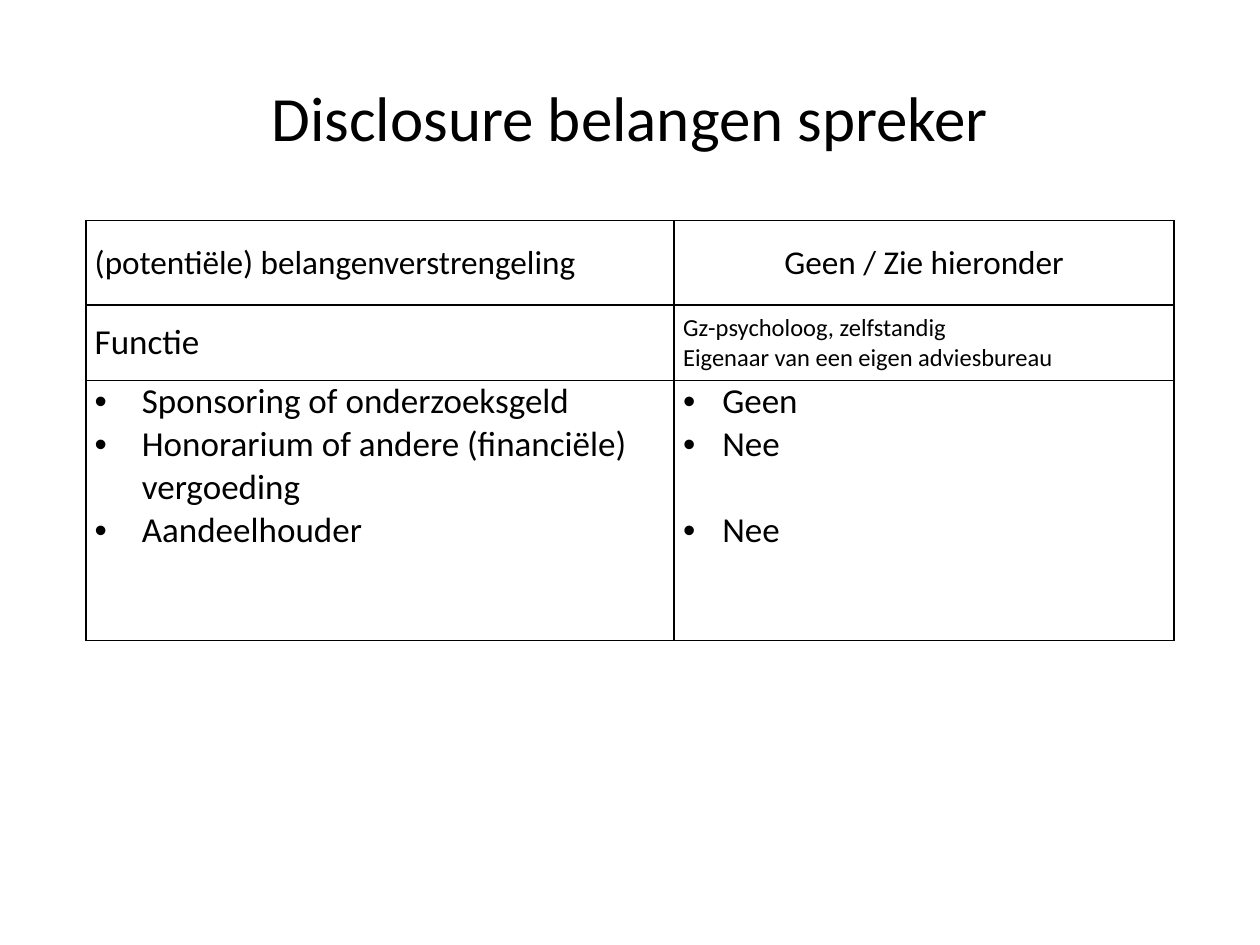
from lxml.etree import SubElement
from pptx import Presentation
from pptx.dml.color import RGBColor
from pptx.enum.text import MSO_ANCHOR as Anchor, PP_ALIGN as Align
from pptx.oxml.ns import qn
from pptx.util import Cm, Pt

BLACK = RGBColor(0, 0, 0)
WHITE = RGBColor(255, 255, 255)
FONT = "Calibri"


def write(frame, lines, size, align=Align.LEFT, bullet_indent=None, gaps=None):
    """Write one paragraph per line; gaps maps a line number to its space before."""
    for number, line in enumerate(lines):
        paragraph = frame.paragraphs[0] if number == 0 else frame.add_paragraph()
        if bullet_indent:
            properties = paragraph._p.get_or_add_pPr()
            properties.set("marL", str(bullet_indent))
            properties.set("indent", str(-bullet_indent))
            SubElement(properties, qn("a:buFont"), typeface="Arial")
            SubElement(properties, qn("a:buChar"), char="•")
        paragraph.alignment = align
        if gaps and number in gaps:
            paragraph.space_before = Pt(gaps[number])
        run = paragraph.add_run()
        run.text = line
        run.font.name = FONT
        run.font.size = Pt(size)
        run.font.color.rgb = BLACK


def add_borders(cell):
    properties = cell._tc.get_or_add_tcPr()
    for side in ("lnL", "lnR", "lnT", "lnB"):
        line = SubElement(properties, qn(f"a:{side}"), w=str(Pt(1)))
        fill = SubElement(line, qn("a:solidFill"))
        SubElement(fill, qn("a:srgbClr"), val=str(BLACK))


presentation = Presentation()
presentation.slide_width = Cm(25.4)
presentation.slide_height = Cm(19.05)
slide = presentation.slides.add_slide(presentation.slide_layouts[6])
slide.background.fill.solid()
slide.background.fill.fore_color.rgb = WHITE

# Title
title = slide.shapes.add_textbox(Cm(1.27), Cm(0.76), Cm(22.86), Cm(3.18))
title.text_frame.word_wrap = True
title.text_frame.vertical_anchor = Anchor.MIDDLE
write(title.text_frame, ["Disclosure belangen spreker"], 36, align=Align.CENTER)

# Disclosure table: text lines and their format for each cell
rows = [
    [(["(potentiële) belangenverstrengeling"], dict(size=19)),
     (["Geen / Zie hieronder"], dict(size=19, align=Align.CENTER))],
    [(["Functie"], dict(size=20)),
     (["Gz-psycholoog, zelfstandig", "Eigenaar van een eigen adviesbureau"],
      dict(size=14))],
    [(["Sponsoring of onderzoeksgeld",
       "Honorarium of andere (financiële) vergoeding",
       "Aandeelhouder"], dict(size=20, bullet_indent=Cm(0.95))),
     (["Geen", "Nee", "Nee"],
      dict(size=20, bullet_indent=Cm(0.79), gaps={2: 24.4}))],
]
column_widths = [Cm(11.86), Cm(10.08)]
row_heights = [Cm(1.7), Cm(1.52), Cm(5.24)]

frame = slide.shapes.add_table(len(rows), len(column_widths), Cm(1.73), Cm(4.45),
                               sum(column_widths), sum(row_heights))
table = frame.table
table.first_row = False
table.horz_banding = False
for column, width in zip(table.columns, column_widths):
    column.width = width
for row, height in zip(table.rows, row_heights):
    row.height = height

for row_number, contents in enumerate(rows):
    for column_number, (lines, text_format) in enumerate(contents):
        cell = table.cell(row_number, column_number)
        cell.margin_left = cell.margin_right = Cm(0.18)
        cell.margin_top = cell.margin_bottom = Cm(0)
        cell.vertical_anchor = Anchor.TOP if row_number == 2 else Anchor.MIDDLE
        add_borders(cell)
        cell.fill.background()
        write(cell.text_frame, lines, **text_format)

presentation.save("out.pptx")
